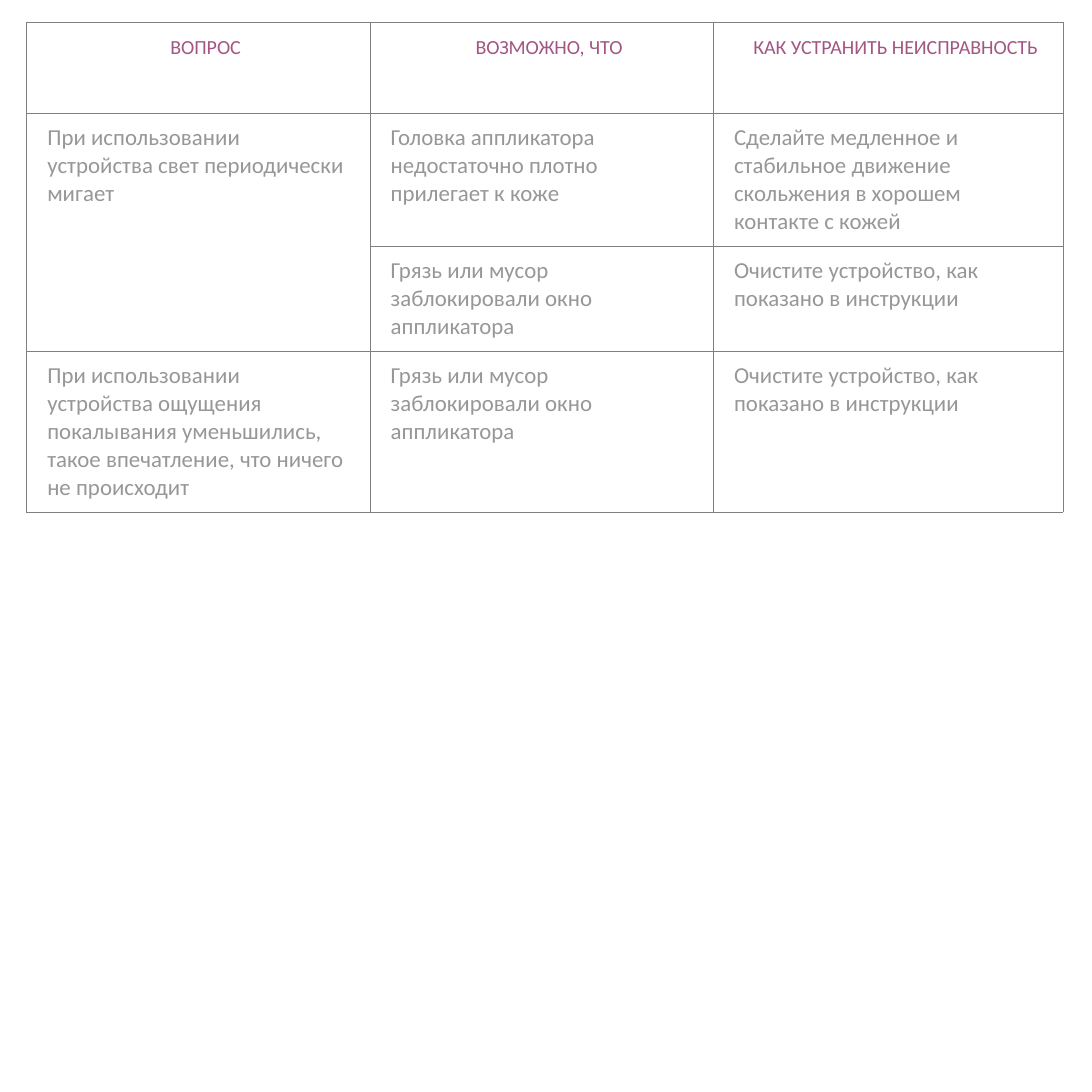
from dataclasses import dataclass

from lxml import etree
from pptx import Presentation
from pptx.dml.color import RGBColor
from pptx.enum.text import PP_ALIGN
from pptx.oxml.ns import qn
from pptx.table import _Cell
from pptx.util import Inches, Pt

CENTER = PP_ALIGN.CENTER
LEFT = PP_ALIGN.LEFT
FONT = "Calibri"
BORDER_COLOR = "808080"
BORDER_WIDTH = Pt(0.25)


@dataclass(frozen=True)
class CellStyle:
    size: float
    color: str
    align: PP_ALIGN
    line_spacing: float
    indent: float


@dataclass(frozen=True)
class Row:
    height: float
    texts: tuple[str, str, str]
    style: CellStyle


HEADING = CellStyle(7, "A35683", CENTER, 1.1, 0.07)
BODY = CellStyle(8, "979797", LEFT, 1.0, 0)

DIRT = "Грязь или мусор заблокировали окно аппликатора"
CLEANING = "Очистите устройство, как показано в инструкции"

COLUMN_WIDTHS = (1.67, 1.67, 1.7)
ROWS = (
    Row(0.44, ("ВОПРОС", "ВОЗМОЖНО, ЧТО", "КАК УСТРАНИТЬ НЕИСПРАВНОСТЬ"), HEADING),
    Row(0.63, (
        "При использовании устройства свет периодически мигает",
        "Головка аппликатора недостаточно плотно прилегает к коже",
        "Сделайте медленное и стабильное движение скольжения в хорошем контакте с кожей",
    ), BODY),
    Row(0.5, ("", DIRT, CLEANING), BODY),
    Row(0.76, (
        "При использовании устройства ощущения покалывания уменьшились, "
        "такое впечатление, что ничего не происходит",
        DIRT,
        CLEANING,
    ), BODY),
)


def rgb(color: str) -> RGBColor:
    return RGBColor.from_string(color)


def add_borders(cell: _Cell) -> None:
    properties = cell._tc.get_or_add_tcPr()
    for side in ("a:lnL", "a:lnR", "a:lnT", "a:lnB"):
        line = etree.SubElement(properties, qn(side), w=str(int(BORDER_WIDTH)))
        fill = etree.SubElement(line, qn("a:solidFill"))
        etree.SubElement(fill, qn("a:srgbClr"), val=BORDER_COLOR)


def write_text(cell: _Cell, text: str, style: CellStyle) -> None:
    paragraph = cell.text_frame.paragraphs[0]
    paragraph.alignment = style.align
    paragraph.line_spacing = style.line_spacing
    if style.indent:
        paragraph._p.get_or_add_pPr().set("marL", str(int(Inches(style.indent))))
    run = paragraph.add_run()
    run.text = text
    run.font.name = FONT
    run.font.size = Pt(style.size)
    run.font.color.rgb = rgb(style.color)


def main() -> None:
    presentation = Presentation()
    presentation.slide_width = presentation.slide_height = Inches(5.31)
    slide = presentation.slides.add_slide(presentation.slide_layouts[6])

    # Troubleshooting table
    troubleshooting = slide.shapes.add_table(
        len(ROWS), len(COLUMN_WIDTHS), Inches(0.13), Inches(0.11),
        Inches(sum(COLUMN_WIDTHS)), Inches(sum(row.height for row in ROWS)),
    ).table
    troubleshooting.first_row = False
    troubleshooting.horz_banding = False
    for column, width in zip(troubleshooting.columns, COLUMN_WIDTHS):
        column.width = Inches(width)

    # The first question has two possible causes
    troubleshooting.cell(1, 0).merge(troubleshooting.cell(2, 0))

    # Cells
    for row_index, row in enumerate(ROWS):
        troubleshooting.rows[row_index].height = Inches(row.height)
        for column_index, text in enumerate(row.texts):
            cell = troubleshooting.cell(row_index, column_index)
            add_borders(cell)
            cell.fill.background()
            if text:
                write_text(cell, text, row.style)

    presentation.save("out.pptx")


if __name__ == "__main__":
    main()
